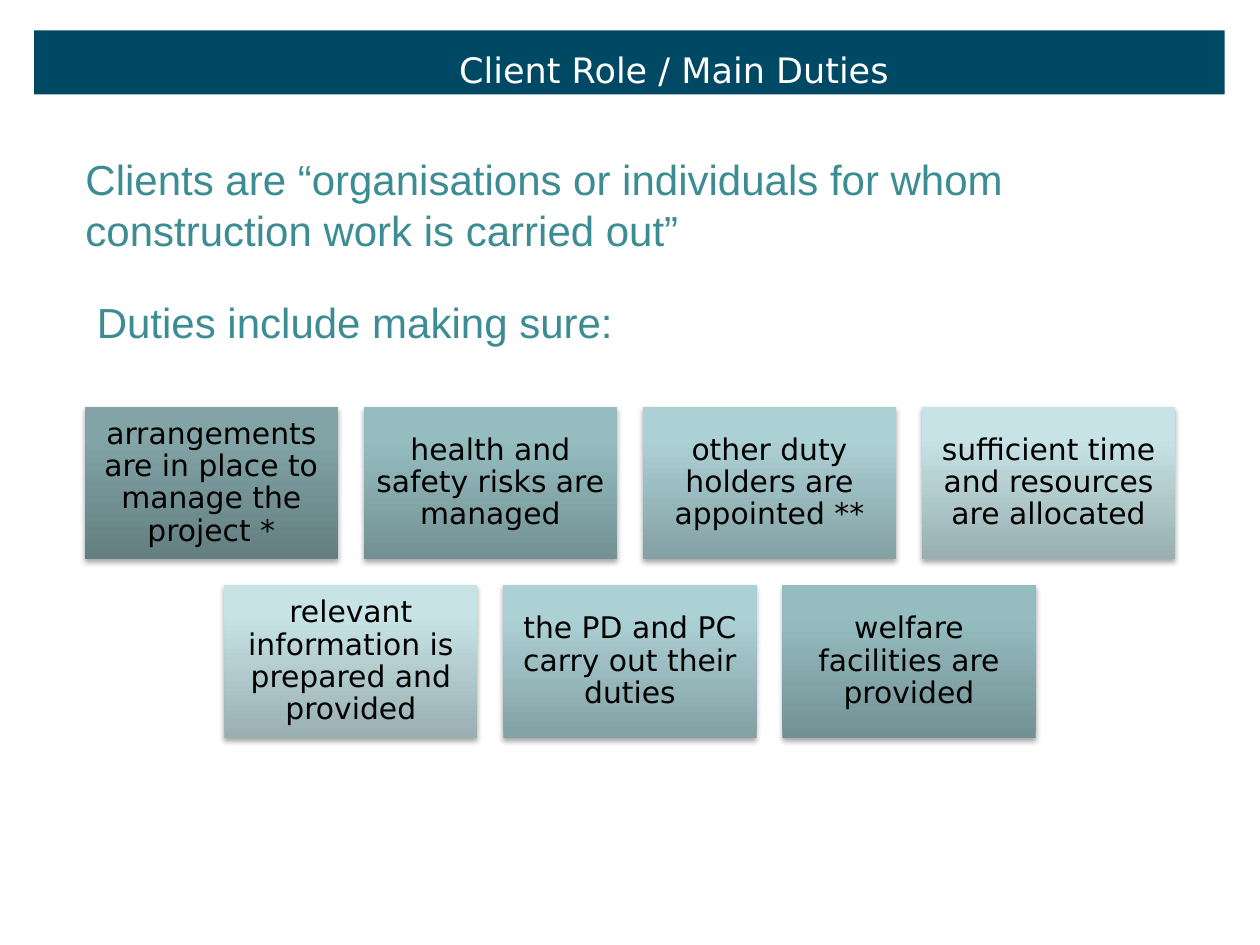
"""Build the slide on the client role and main duties."""
from pptx import Presentation
from pptx.dml.color import RGBColor
from pptx.enum.shapes import MSO_SHAPE
from pptx.enum.text import MSO_ANCHOR, MSO_AUTO_SIZE, PP_ALIGN
from pptx.oxml import parse_xml
from pptx.oxml.ns import nsdecls
from pptx.util import Inches, Pt

RECTANGLE = MSO_SHAPE.RECTANGLE
CENTER, LEFT = PP_ALIGN.CENTER, PP_ALIGN.LEFT
TOP, MIDDLE, BOTTOM = MSO_ANCHOR.TOP, MSO_ANCHOR.MIDDLE, MSO_ANCHOR.BOTTOM
NO_FIT = MSO_AUTO_SIZE.NONE
TITLE_ONLY = 5

TITLE = "Client Role / Main Duties"
DEFINITION = "Clients are “organisations or individuals for whom construction work is carried out”"
LEAD_IN = "Duties include making sure:"
DUTY_ROWS = [
    [
        ("arrangements are in place to manage the project *", "deep"),
        ("health and safety risks are managed", "mid"),
        ("other duty holders are appointed **", "soft"),
        ("sufficient time and resources are allocated", "pale"),
    ],
    [
        ("relevant information is prepared and provided", "pale"),
        ("the PD and PC carry out their duties", "soft"),
        ("welfare facilities are provided", "mid"),
    ],
]

THEME = {
    "band": "004964",
    "title": {"font": "DejaVu Sans", "size": 20, "color": "FFFFFF"},
    "statement": {"font": "Arial", "size": 24, "color": "3C8C93"},
    "duty": {"font": "DejaVu Sans", "size": 17, "color": "000000"},
    "gradients": {
        "deep": ("647E81", "82A4A7", "82A6A9"),
        "mid": ("739194", "95BDC0", "95BEC2"),
        "soft": ("84A1A4", "ACD1D5", "ACD3D6"),
        "pale": ("99AFB1", "C7E3E5", "C7E4E7"),
    },
}
STOPS = (0, 80, 100)

SLIDE_WIDTH, SLIDE_HEIGHT = 10, 7.5
CARD_WIDTH, CARD_HEIGHT = 2.01, 1.21
CARD_GAP, CARD_TOP = 0.205, 3.23


def write(box, text, font, size, color, align=LEFT, anchor=TOP, spacing=1.0,
          wrap=True, margins=(0.1, 0.05)):
    """Put formatted text into a shape."""
    frame = box.text_frame
    frame.auto_size = NO_FIT
    frame.word_wrap = wrap
    frame.vertical_anchor = anchor
    frame.margin_left = frame.margin_right = Inches(margins[0])
    frame.margin_top = frame.margin_bottom = Inches(margins[1])
    para = frame.paragraphs[0]
    para.alignment = align
    para.line_spacing = spacing
    span = para.add_run()
    span.text = text
    span.font.name = font
    span.font.size = Pt(size)
    span.font.color.rgb = RGBColor.from_string(color)


def add_rectangle(page, left, top, width, height):
    """Add a rectangle without outline or shadow."""
    box = page.shapes.add_shape(
        RECTANGLE, Inches(left), Inches(top), Inches(width), Inches(height))
    box.shadow.inherit = False
    box.line.fill.background()
    return box


def add_card(page, text, shade, left, top):
    """Add a duty card with a vertical gradient and a soft shadow."""
    card = add_rectangle(page, left, top, CARD_WIDTH, CARD_HEIGHT)
    stops = "".join(
        f'<a:gs pos="{position * 1000}"><a:srgbClr val="{color}"/></a:gs>'
        for position, color in zip(STOPS, THEME["gradients"][shade]))
    properties = card.element.spPr
    properties.ln.addprevious(parse_xml(
        f'<a:gradFill {nsdecls("a")} rotWithShape="1"><a:gsLst>{stops}</a:gsLst>'
        '<a:lin ang="16200000" scaled="0"/></a:gradFill>'))
    properties.find("{*}effectLst").append(parse_xml(
        f'<a:outerShdw {nsdecls("a")} blurRad="{Pt(3.1)}" dist="{Pt(1.8)}" '
        'dir="5400000" rotWithShape="0"><a:srgbClr val="000000">'
        '<a:alpha val="35000"/></a:srgbClr></a:outerShdw>'))
    write(card, text, **THEME["duty"], align=CENTER, anchor=MIDDLE,
          spacing=0.9, margins=(0.07, 0.07))


def add_statement(page, text, left, top, width, height, wrap=True):
    """Add a large line of introductory text."""
    box = page.shapes.add_textbox(
        Inches(left), Inches(top), Inches(width), Inches(height))
    write(box, text, **THEME["statement"], wrap=wrap)


def main():
    """Assemble and save the deck."""
    deck = Presentation()
    deck.slide_width, deck.slide_height = Inches(SLIDE_WIDTH), Inches(SLIDE_HEIGHT)
    page = deck.slides.add_slide(deck.slide_layouts[TITLE_ONLY])

    title = page.shapes.title
    title.left, title.top = Inches(0.94), Inches(0.15)
    title.width, title.height = Inches(8.82), Inches(0.61)
    write(title, TITLE, **THEME["title"], align=CENTER, anchor=BOTTOM, spacing=0.75)

    band = add_rectangle(page, 0.27, 0.24, 9.45, 0.51)
    band.fill.solid()
    band.fill.fore_color.rgb = RGBColor.from_string(THEME["band"])
    title.element.addprevious(band.element)

    for row, duties in enumerate(DUTY_ROWS):
        row_width = len(duties) * (CARD_WIDTH + CARD_GAP) - CARD_GAP
        start = (SLIDE_WIDTH - row_width) / 2
        top = CARD_TOP + row * (CARD_HEIGHT + CARD_GAP)
        for column, (text, shade) in enumerate(duties):
            add_card(page, text, shade, start + column * (CARD_WIDTH + CARD_GAP), top)

    add_statement(page, DEFINITION, 0.58, 1.17, 8.83, 0.91)
    add_statement(page, LEAD_IN, 0.67, 2.3, 4.34, 0.51, wrap=False)
    deck.save("out.pptx")


if __name__ == "__main__":
    main()
